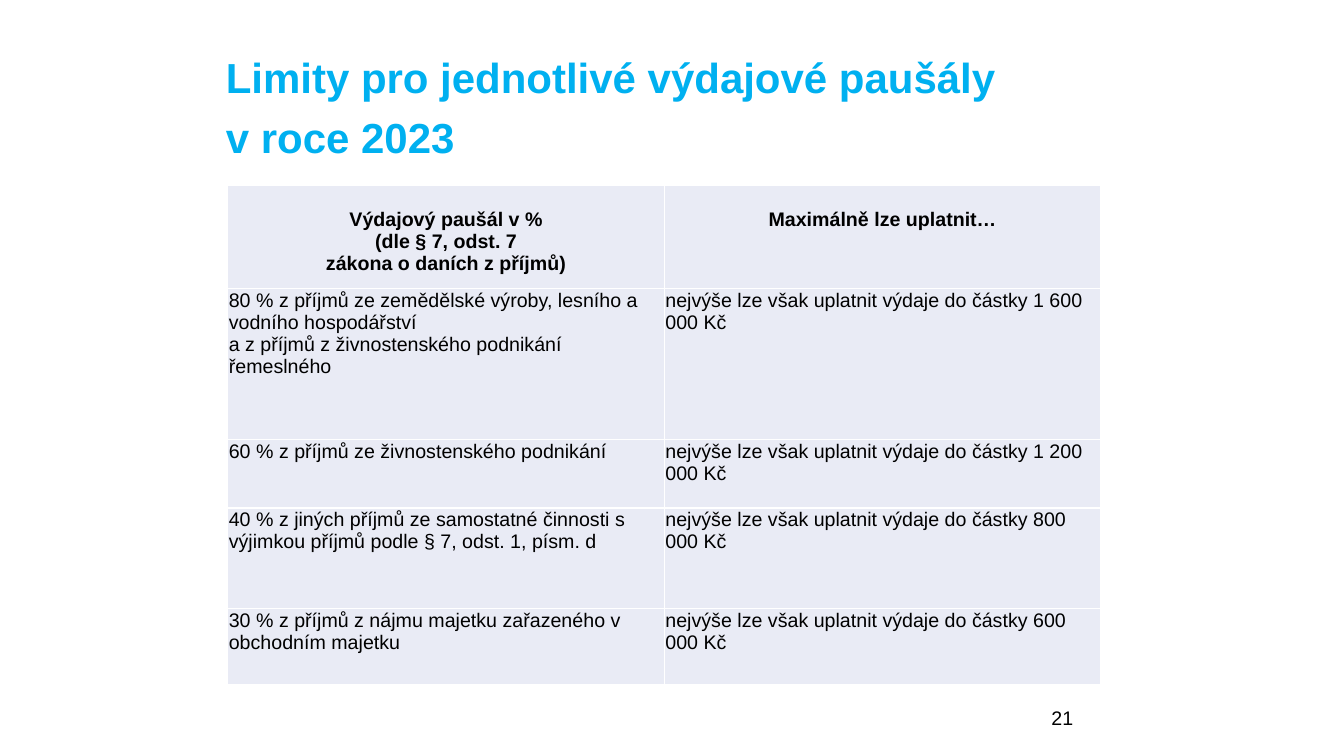
"""Build the slide on yearly limits of flat-rate expenses."""
from lxml import etree
from pptx import Presentation
from pptx import util as u
from pptx.dml.color import RGBColor
from pptx.enum import text
from pptx.oxml import ns


def style(paragraph, size, color="000000", bold=False):
    paragraph.font.name = "Arial"
    paragraph.font.size = u.Pt(size)
    paragraph.font.bold = bold
    paragraph.font.color.rgb = RGBColor.from_string(color)


def add_borders(cell, color, points):
    properties = cell._tc.get_or_add_tcPr()
    for side in ("a:lnL", "a:lnR", "a:lnT", "a:lnB"):
        line = etree.SubElement(properties, ns.qn(side), w=str(u.Pt(points)))
        fill = etree.SubElement(line, ns.qn("a:solidFill"))
        etree.SubElement(fill, ns.qn("a:srgbClr"), val=color)


deck = Presentation()
deck.slide_width, deck.slide_height = u.Inches(13.33), u.Inches(7.5)
slide = deck.slides.add_slide(deck.slide_layouts[5])

heading = slide.shapes.title
heading.left, heading.top = u.Inches(2.14), u.Inches(0.52)
heading.width, heading.height = u.Inches(10.79), u.Inches(1.3)
heading.text_frame.text = "Limity pro jednotlivé výdajové paušály\nv roce 2023"
heading.text_frame.auto_size = text.MSO_AUTO_SIZE.NONE
heading.text_frame.vertical_anchor = text.MSO_ANCHOR.TOP
for index, paragraph in enumerate(heading.text_frame.paragraphs):
    paragraph.alignment = text.PP_ALIGN.LEFT
    paragraph.line_spacing = 0.9
    paragraph.space_before = u.Pt(10 * index)
    style(paragraph, 30, "00B0F0", True)

page = slide.shapes.add_textbox(u.Inches(10.33), u.Inches(6.95), u.Inches(3), u.Inches(0.4))
page.text_frame.word_wrap = True
page.text_frame.text = "21"
style(page.text_frame.paragraphs[0], 14)

limits = [
    ("Výdajový paušál v %\n(dle § 7, odst. 7\nzákona o daních z příjmů)",
     "Maximálně lze uplatnit…"),
    ("80 % z příjmů ze zemědělské výroby, lesního a vodního hospodářství\n"
     "a z příjmů z živnostenského podnikání řemeslného",
     "nejvýše lze však uplatnit výdaje do částky 1 600 000 Kč"),
    ("60 % z příjmů ze živnostenského podnikání",
     "nejvýše lze však uplatnit výdaje do částky 1 200 000 Kč"),
    ("40 % z jiných příjmů ze samostatné činnosti s výjimkou příjmů podle § 7, odst. 1, písm. d",
     "nejvýše lze však uplatnit výdaje do částky 800 000 Kč"),
    ("30 % z příjmů z nájmu majetku zařazeného v obchodním majetku",
     "nejvýše lze však uplatnit výdaje do částky 600 000 Kč"),
]
row_heights = [1.02, 1.5, 0.68, 1, 0.75]
table = slide.shapes.add_table(len(limits), 2, u.Inches(2.26), u.Inches(1.84),
                               u.Inches(8.66), u.Inches(sum(row_heights))).table
table.horz_banding = False
for row, (height, entries) in enumerate(zip(row_heights, limits)):
    is_header = row == 0
    table.rows[row].height = u.Inches(height)
    for column, entry in enumerate(entries):
        cell = table.cell(row, column)
        cell.margin_left = cell.margin_right = u.Inches(0.01)
        cell.margin_top = u.Inches(0.23 if is_header else 0.01)
        cell.margin_bottom = 0
        add_borders(cell, "FFFFFF", 1)
        cell.fill.solid()
        cell.fill.fore_color.rgb = RGBColor.from_string("E9EBF5")
        cell.text_frame.text = entry
        for paragraph in cell.text_frame.paragraphs:
            paragraph.alignment = text.PP_ALIGN.CENTER if is_header else text.PP_ALIGN.LEFT
            style(paragraph, 14, bold=is_header)

deck.save("out.pptx")
